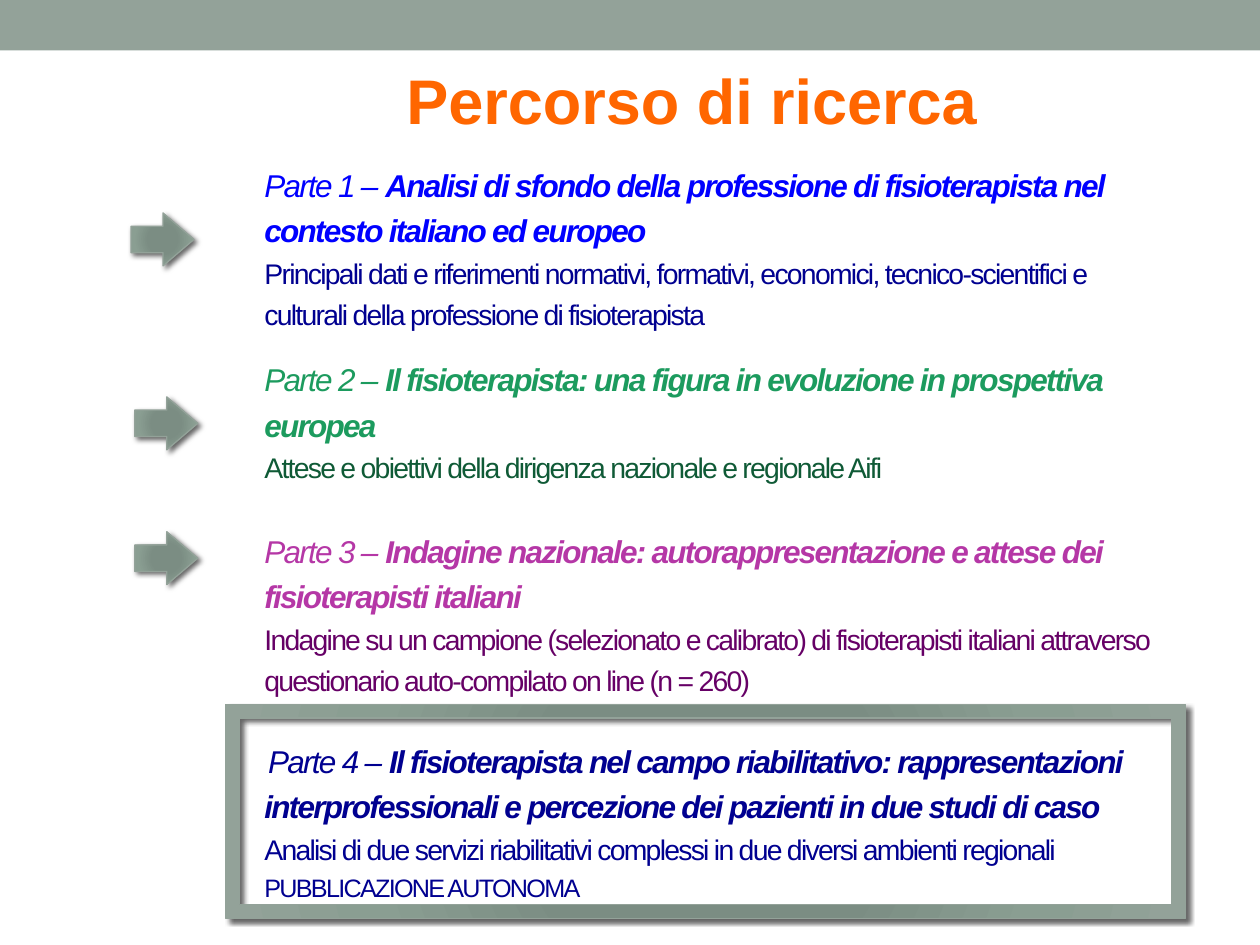
import pptx
import pptx.util
import pptx.dml.color
import pptx.enum.shapes
import pptx.enum.text
import pptx.oxml
from dataclasses import dataclass

Inches, Pt = pptx.util.Inches, pptx.util.Pt
Rgb = pptx.dml.color.RGBColor.from_string
Kind = pptx.enum.shapes.MSO_SHAPE
Text = pptx.enum.text
NS = 'xmlns:a="http://schemas.openxmlformats.org/drawingml/2006/main"'


@dataclass
class Theme:
    font: str = "Arial"
    sage: str = "93A299"
    grad: tuple = ((0, "7B8E82"), (34, "7B8D83"), (70, "8A9E92"), (100, "93A299"))
    title: str = "FF6600"
    big: float = 36
    head: float = 18
    body: float = 16.2
    note: float = 14.4


theme = Theme()
deck = pptx.Presentation()
deck.slide_width, deck.slide_height = Inches(10), Inches(7.5)
slide = deck.slides.add_slide(deck.slide_layouts[6])


def add_shape(kind, left, top, width, height, *adj):
    """Add a sage shape with a radial gradient and a soft shadow."""
    shape = slide.shapes.add_shape(
        kind, Inches(left), Inches(top), Inches(width), Inches(height))
    for i, value in enumerate(adj):
        shape.adjustments[i] = value
    stops = "".join(f'<a:gs pos="{pos * 1000}"><a:srgbClr val="{color}"/></a:gs>'
                    for pos, color in theme.grad)
    fill = pptx.oxml.parse_xml(
        f'<a:gradFill {NS} rotWithShape="1"><a:gsLst>{stops}</a:gsLst><a:path path="circle">'
        '<a:fillToRect l="100000" t="100000" r="100000" b="100000"/></a:path></a:gradFill>')
    shape._element.spPr.find(pptx.oxml.ns.qn("a:prstGeom")).addnext(fill)
    shape.line.color.rgb = Rgb(theme.sage)
    shape.line.width = Pt(0.75)
    shape._element.spPr.append(pptx.oxml.parse_xml(
        f'<a:effectLst {NS}><a:outerShdw blurRad="{Pt(3)}" dist="{Pt(2)}" dir="2700000" '
        'rotWithShape="0"><a:srgbClr val="000000"><a:alpha val="60000"/></a:srgbClr>'
        '</a:outerShdw></a:effectLst>'))


def add_line(frame, runs, size, color, before=0):
    """Add a tight paragraph from (text, bold, italic) runs."""
    first = frame.paragraphs[0]
    para = frame.add_paragraph() if first.runs else first
    para.line_spacing = 1.2
    para.space_before = Pt(before)
    para.font.name, para.font.size = theme.font, Pt(size)
    para.font.color.rgb = Rgb(color)
    for text, bold, italic in runs:
        run = para.add_run()
        run.text = text
        run.font.bold, run.font.italic = bold, italic
        run._r.get_or_add_rPr().set("spc", "-100")
    return para


# Top band
band = slide.shapes.add_shape(Kind.RECTANGLE, 0, 0, Inches(10), Inches(0.4))
band.shadow.inherit = False
band.fill.solid()
band.fill.fore_color.rgb = Rgb(theme.sage)
band.line.fill.background()

# Research parts: heading, heading colour, body, body colour, space before
parts = [
    ("Analisi di sfondo della professione di fisioterapista nel contesto italiano ed europeo",
     "0000FF",
     "Principali dati e riferimenti normativi, formativi, economici, tecnico-scientifici e "
     "culturali della professione di fisioterapista", "000090", 0),
    ("Il fisioterapista: una figura in evoluzione in prospettiva europea", "1C9B5E",
     "Attese e obiettivi della dirigenza nazionale e regionale Aifi", "0F5A36", 12.5),
    ("Indagine nazionale: autorappresentazione e attese dei fisioterapisti italiani", "B537A6",
     "Indagine su un campione (selezionato e calibrato) di fisioterapisti italiani attraverso "
     "questionario auto-compilato on line (n = 260)", "660066", 23),
    ("Il fisioterapista nel campo riabilitativo: rappresentazioni interprofessionali e "
     "percezione dei pazienti in due studi di caso", "000090",
     "Analisi di due servizi riabilitativi complessi in due diversi ambienti regionali",
     "000090", 21.5),
]
box = slide.shapes.add_textbox(Inches(2), Inches(1.13), Inches(7.41), Inches(6.16))
frame = box.text_frame
frame.word_wrap = True
frame.vertical_anchor = Text.MSO_ANCHOR.MIDDLE
for num, (head, tint, body, shade, gap) in enumerate(parts, 1):
    para = add_line(frame, [(f"Parte {num} – ", False, True), (head, True, True)],
                    theme.head, tint, gap)
    add_line(frame, [(body, False, False)], theme.body, shade)
para._p.get_or_add_pPr().set("indent", str(Inches(0.03)))
add_line(frame, [("PUBBLICAZIONE AUTONOMA", False, False)], theme.note, shade)

# Title
box = slide.shapes.add_textbox(Inches(2), Inches(0.44), Inches(7.07), Inches(0.83))
frame = box.text_frame
frame.word_wrap = True
frame.margin_left = Inches(0.15)
para = frame.paragraphs[0]
para.text = "Percorso di ricerca "
para.alignment = Text.PP_ALIGN.CENTER
para.font.name, para.font.size, para.font.bold = theme.font, Pt(theme.big), True
para.font.color.rgb = Rgb(theme.title)

# Arrows beside the first three parts
for left, top in ((1.04, 1.69), (1.07, 3.15), (1.07, 4.22)):
    add_shape(Kind.RIGHT_ARROW, left, top, 0.5, 0.42, 0.5, 0.585)

# Frame around the fourth part
add_shape(Kind.FRAME, 1.79, 5.59, 7.62, 1.7, 0.064)

deck.save("out.pptx")
